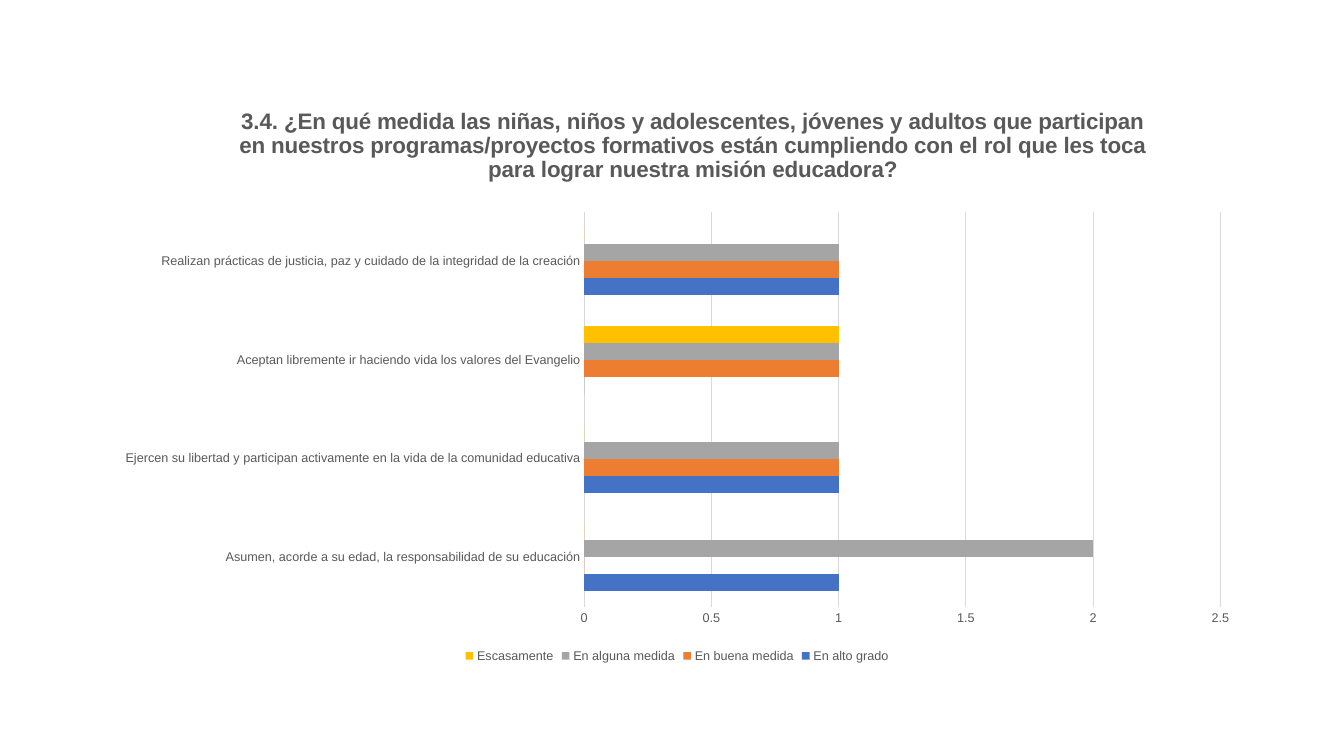
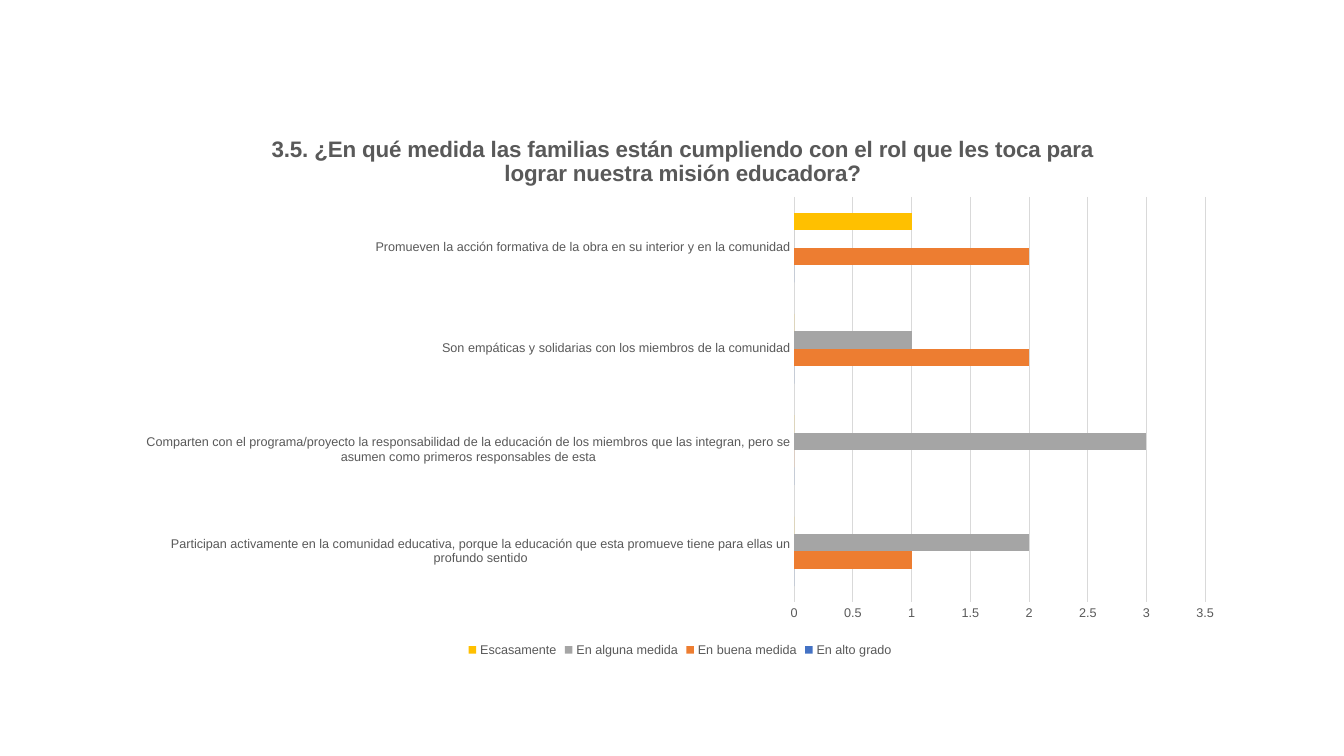
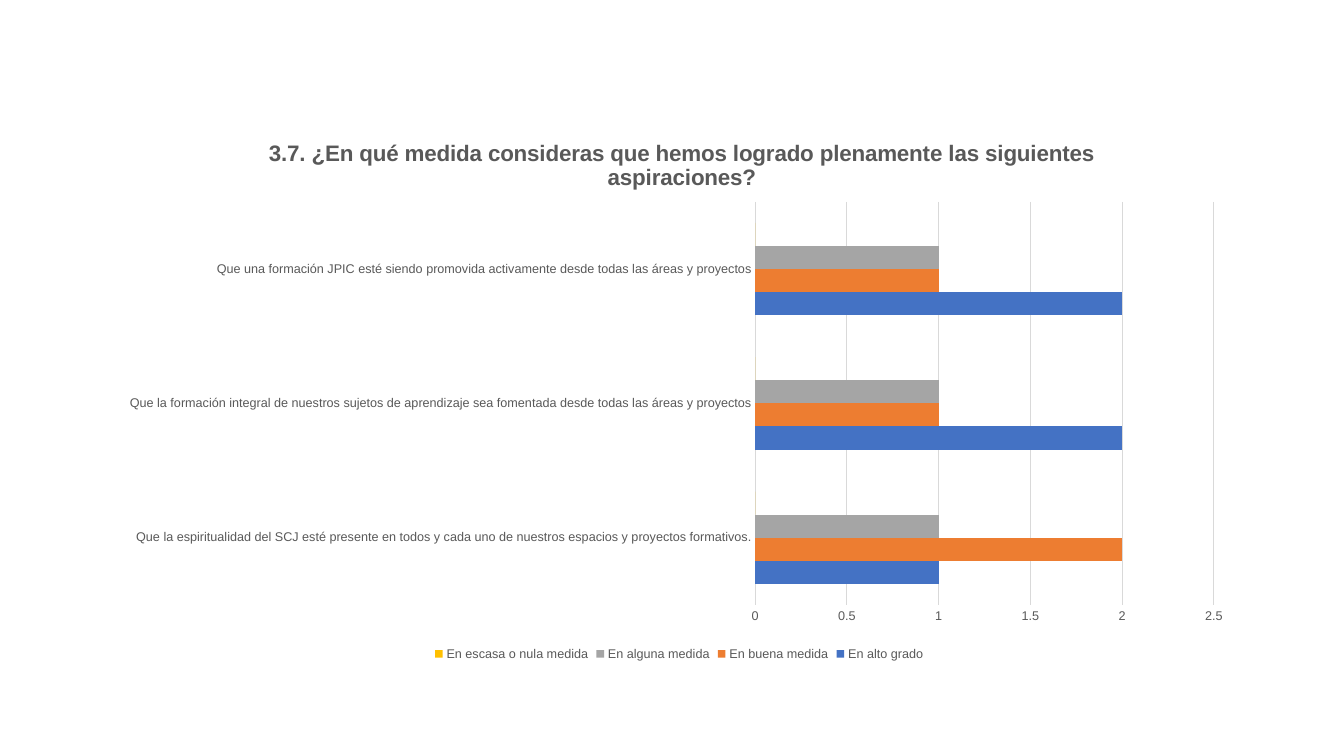
from lxml.etree import SubElement
from pptx import Presentation
from pptx.chart.data import CategoryChartData
from pptx.dml.color import RGBColor
from pptx.enum.chart import XL_CHART_TYPE, XL_LEGEND_POSITION, XL_TICK_MARK
from pptx.oxml.ns import qn
from pptx.util import Inches, Pt

TEXT = RGBColor(0x59, 0x59, 0x59)
GRID = RGBColor(0xD9, 0xD9, 0xD9)
BLACK = RGBColor(0x00, 0x00, 0x00)
BLUE = RGBColor(0x44, 0x72, 0xC4)
ORANGE = RGBColor(0xED, 0x7D, 0x31)
GRAY = RGBColor(0xA5, 0xA5, 0xA5)
YELLOW = RGBColor(0xFF, 0xC0, 0x00)
SERIES_COLORS = (BLUE, ORANGE, GRAY, YELLOW)

FONT = "Arial"
BASE_FONT = {"name": FONT, "size": Pt(10)}
LABEL_FONT = {"name": FONT, "size": Pt(9), "bold": False}
TITLE_FONT = {"name": FONT, "size": Pt(16), "bold": True}

GRADES = ("En alto grado", "En buena medida", "En alguna medida")

# Frames are left, top, width, height in percent of the slide;
# title and plot places are in percent of the chart frame.
SURVEY = (
    {
        "title": "3.4. ¿En qué medida las niñas, niños y adolescentes, jóvenes y adultos "
                 "que participan en nuestros programas/proyectos formativos están cumpliendo "
                 "con el rol que les toca para lograr nuestra misión educadora?",
        "frame": (7.58, 12.93, 85.6, 75.33),
        "title_place": (11.6, 0.9),
        "plot_place": (41.93, 20.05, 55.3, 69.36),
        "lowest_grade": "Escasamente",
        "answers": {
            "Asumen, acorde a su edad, la responsabilidad de su educación": (1, 0, 2, 0),
            "Ejercen su libertad y participan activamente en la vida de la comunidad "
            "educativa": (1, 1, 1, 0),
            "Aceptan libremente ir haciendo vida los valores del Evangelio": (0, 1, 1, 1),
            "Realizan prácticas de justicia, paz y cuidado de la integridad de la "
            "creación": (1, 1, 1, 0),
        },
    },
    {
        "title": "3.5. ¿En qué medida las familias están cumpliendo con el rol que les toca "
                 "para lograr nuestra misión educadora?",
        "frame": (9.23, 14.27, 82.75, 73.2),
        "title_place": (12.9, 4.2),
        "plot_place": (60.26, 16.1, 36.96, 73.2),
        "lowest_grade": "Escasamente",
        "answers": {
            "Participan activamente en la comunidad educativa, porque la educación que esta "
            "promueve tiene para ellas un profundo sentido": (0, 1, 2, 0),
            "Comparten con el programa/proyecto la responsabilidad de la educación de los "
            "miembros que las integran, pero se asumen como primeros responsables de "
            "esta": (0, 0, 3, 0),
            "Son empáticas y solidarias con los miembros de la comunidad": (0, 2, 1, 0),
            "Promueven la acción formativa de la obra en su interior y en la "
            "comunidad": (0, 2, 0, 1),
        },
    },
    {
        "title": "3.7. ¿En qué medida consideras que hemos logrado plenamente las siguientes "
                 "aspiraciones?",
        "frame": (8.18, 14.93, 84.7, 73.07),
        "title_place": (13.6, 4),
        "plot_place": (56.69, 16.13, 40.29, 72.96),
        "lowest_grade": "En escasa o nula medida",
        "answers": {
            "Que la espiritualidad del SCJ esté presente en todos y cada uno de nuestros "
            "espacios y proyectos formativos.": (1, 2, 1, 0),
            "Que la formación integral de nuestros sujetos de aprendizaje sea fomentada "
            "desde todas las áreas y proyectos": (2, 1, 1, 0),
            "Que una formación JPIC esté siendo promovida activamente desde todas las "
            "áreas y proyectos": (2, 1, 1, 0),
        },
    },
)


def set_all(target, values):
    for name, value in values.items():
        setattr(target, name, value)


def set_font(font, values, color=TEXT):
    set_all(font, values)
    font.color.rgb = color


def set_line(line, color):
    line.color.rgb = color
    line.width = Pt(0.75)


def place(element, before, percents, inner=False):
    """Give a chart part a manual layout, inserted ahead of the tags in before."""
    for layout in element.findall(qn("c:layout")):
        element.remove(layout)
    layout = SubElement(element, qn("c:layout"))
    following = next((child for child in element if child.tag in map(qn, before)), None)
    if following is not None:
        following.addprevious(layout)
    manual = SubElement(layout, qn("c:manualLayout"))
    settings = [("layoutTarget", "inner")] if inner else []
    settings += [("xMode", "edge"), ("yMode", "edge")]
    settings += [(key, f"{percent / 100:.4f}") for key, percent in zip("xywh", percents)]
    for key, value in settings:
        SubElement(manual, qn(f"c:{key}")).set("val", value)


class SurveyDeck:
    def __init__(self):
        self.presentation = Presentation()
        set_all(self.presentation, {"slide_width": Inches(13.33), "slide_height": Inches(7.5)})
        self.slide = None

    def add_slide(self):
        self.slide = self.presentation.slides.add_slide(self.presentation.slide_layouts[6])

    def box(self, percents):
        """Turn percent of the slide into lengths."""
        sides = (self.presentation.slide_width, self.presentation.slide_height) * 2
        return [int(side * percent / 100) for side, percent in zip(sides, percents)]

    def add_bar_chart(self, frame, lowest_grade, answers):
        data = CategoryChartData()
        data.categories = list(answers)
        for grade, values in zip((*GRADES, lowest_grade), zip(*answers.values())):
            data.add_series(grade, values)
        chart = self.slide.shapes.add_chart(
            XL_CHART_TYPE.BAR_CLUSTERED, *self.box(frame), data).chart
        set_font(chart.font, BASE_FONT, BLACK)
        plot = chart.plots[0]
        set_all(plot, {"gap_width": 182, "overlap": 0, "vary_by_categories": False})
        for series, color in zip(plot.series, SERIES_COLORS):
            series.format.fill.solid()
            series.format.fill.fore_color.rgb = color
        return chart

    def style_axes(self, chart):
        for axis in (chart.category_axis, chart.value_axis):
            set_all(axis, {"major_tick_mark": XL_TICK_MARK.NONE,
                           "minor_tick_mark": XL_TICK_MARK.NONE})
            set_font(axis.tick_labels.font, LABEL_FONT)
        set_line(chart.category_axis.format.line, GRID)
        chart.value_axis.format.line.fill.background()
        set_line(chart.value_axis.major_gridlines.format.line, GRID)

    def add_legend(self, chart):
        chart.has_legend = True
        set_all(chart.legend, {"position": XL_LEGEND_POSITION.BOTTOM,
                               "include_in_layout": False})
        set_font(chart.legend.font, LABEL_FONT)

    def add_title(self, chart, text, title_place):
        title = chart.chart_title
        title.text_frame.text = text
        set_font(title.text_frame.paragraphs[0].runs[0].font, TITLE_FONT)
        place(title.element, ("c:overlay", "c:spPr", "c:txPr"), title_place)

    def add_question(self, title, frame, title_place, plot_place, lowest_grade, answers):
        self.add_slide()
        chart = self.add_bar_chart(frame, lowest_grade, answers)
        self.style_axes(chart)
        self.add_legend(chart)
        self.add_title(chart, title, title_place)
        plot_area = chart.element.find(f".//{qn('c:plotArea')}")
        place(plot_area, ("c:barChart",), plot_place, inner=True)


def main():
    deck = SurveyDeck()
    for question in SURVEY:
        deck.add_question(**question)
    deck.presentation.save("out.pptx")


if __name__ == "__main__":
    main()
